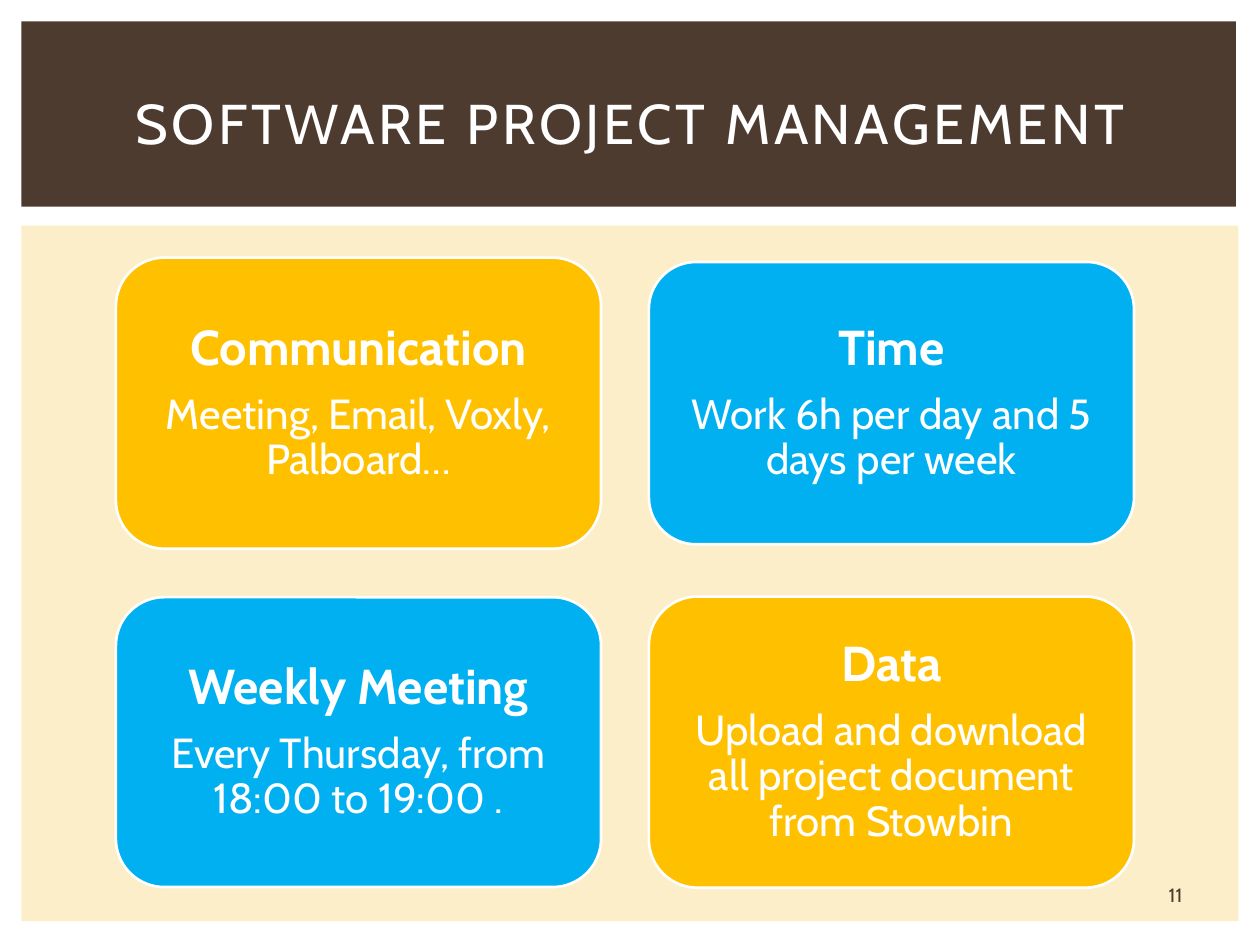
from pptx import Presentation
from pptx.dml.color import RGBColor
from pptx.enum.shapes import MSO_SHAPE as Kind
from pptx.enum.text import MSO_ANCHOR as Anchor, PP_ALIGN as Align
from pptx.util import Inches, Pt

FONT = "Cabin"
WHITE, BROWN, CREAM = "FFFFFF", "4E3B30", "FBEEC9"
GOLD, BLUE = "FFC000", "00B0F0"

COLS = (0.92, 5.15)  # left edges of the cards
ROWS = (3.2, 5.89)  # middles of the cards
WIDE = 3.85

# column, row, height, fill, heading, detail
CARDS = (
    (0, 0, 2.31, GOLD, "Communication", "Meeting, Email, Voxly, Palboard…"),
    (1, 0, 2.24, BLUE, "Time", "Work 6h per day and 5 days per week"),
    (0, 1, 2.3, BLUE, "Weekly Meeting", "Every Thursday, from 18:00 to 19:00 ."),
    (1, 1, 2.31, GOLD, "Data", "Upload and download all project document from Stowbin"),
)


def paint(target, color):
    """Give a fill a solid colour."""
    target.solid()
    target.fore_color.rgb = RGBColor.from_string(color)


def block(slide, kind, box, color):
    shape = slide.shapes.add_shape(kind, *map(Inches, box))
    shape.shadow.inherit = False
    paint(shape.fill, color)
    shape.line.fill.background()
    return shape


def style(para, text, size, color, bold=False):
    para.text = text
    para.alignment = Align.CENTER
    font = para.font
    font.name, font.size, font.bold = FONT, Pt(size), bold
    paint(font.fill, color)


def label(slide, box, text, size, color):
    """Add a centred line of text and return its paragraph."""
    frame = slide.shapes.add_textbox(*map(Inches, box)).text_frame
    frame.word_wrap = True
    frame.vertical_anchor = Anchor.MIDDLE
    para = frame.paragraphs[0]
    style(para, text, size, color)
    return para


def card(slide, col, row, high, color, head, body):
    box = COLS[col], ROWS[row] - high / 2, WIDE, high
    shape = block(slide, Kind.ROUNDED_RECTANGLE, box, color)
    paint(shape.line.fill, WHITE)
    shape.line.width = Pt(1.5)
    frame = shape.text_frame
    frame.word_wrap = True
    frame.vertical_anchor = Anchor.MIDDLE
    frame.margin_left = frame.margin_right = Inches(0.12)
    frame.margin_top = frame.margin_bottom = Inches(0.12)
    first, second = frame.paragraphs[0], frame.add_paragraph()
    style(first, head, 28, WHITE, True)
    style(second, body, 24, WHITE)
    for para, size in ((first, 28), (second, 24)):
        para.line_spacing = 0.9
        para.space_after = Pt(size * 0.35)


def main():
    deck = Presentation()
    deck.slide_width, deck.slide_height = Inches(10), Inches(7.5)
    slide = deck.slides.add_slide(deck.slide_layouts[6])

    block(slide, Kind.RECTANGLE, (0.17, 1.79, 9.66, 5.52), CREAM)
    block(slide, Kind.RECTANGLE, (0.17, 0.17, 9.64, 1.47), BROWN)
    title = label(slide, (0.42, 0.39, 9.17, 1.15),
                  "SOFTWARE PROJECT MANAGEMENT", 32, WHITE)
    title.runs[0].font._element.set("spc", "200")  # letter spacing of 2 pt

    for item in CARDS:
        card(slide, *item)
    label(slide, (9.01, 6.95, 0.64, 0.3), "11", 11, BROWN)
    deck.save("out.pptx")


if __name__ == "__main__":
    main()
